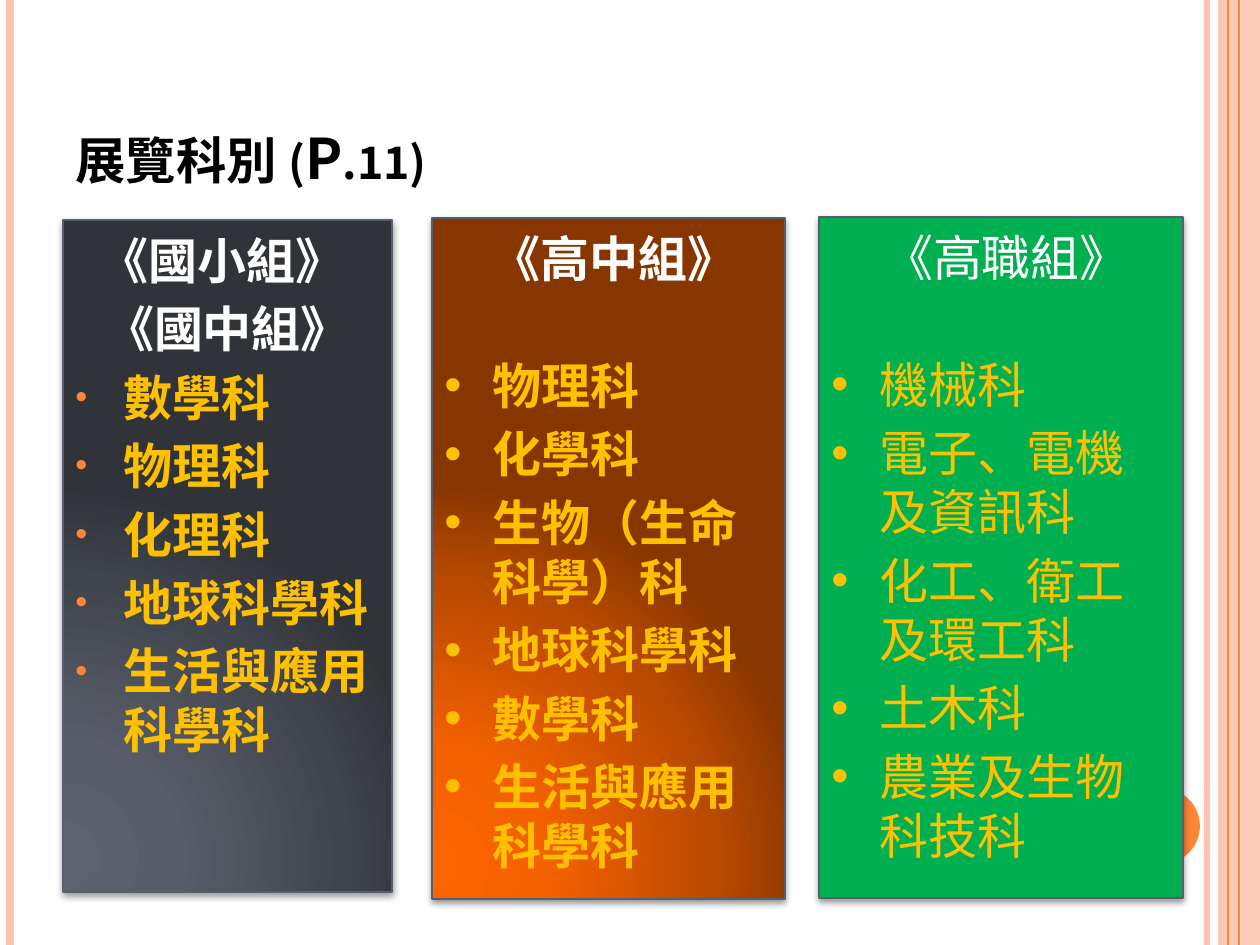
"""Build the slide listing the exhibition subjects of each school group."""
from pptx import Presentation
from pptx.dml.color import RGBColor
from pptx.enum.shapes import MSO_CONNECTOR, MSO_SHAPE
from pptx.enum.text import MSO_ANCHOR, PP_ALIGN
from pptx.oxml import parse_xml
from pptx.oxml.ns import nsdecls, qn
from pptx.util import Pt

STRAIGHT = MSO_CONNECTOR.STRAIGHT
RECTANGLE, OVAL = MSO_SHAPE.RECTANGLE, MSO_SHAPE.OVAL
TOP, BOTTOM = MSO_ANCHOR.TOP, MSO_ANCHOR.BOTTOM
LEFT, CENTER = PP_ALIGN.LEFT, PP_ALIGN.CENTER
WIDTH, HEIGHT = 1260, 945

THEME = {
    "font": "Noto Sans CJK JP",
    "orange": "FE8637", "peach": "FEC3AE", "outline": "575F6D",
    "black": "000000", "white": "FFFFFF", "gold": "FFC000", "green": "00B050",
    "slate": [(0, "5D636E"), (30, "585E69"), (75, "40444C"), (100, "303338")],
    "ember": [(0, "FD6400"), (30, "F46100"), (75, "B74900"), (100, "873600")],
    "title": 36, "page_ref": 32, "body": 28,
    "line_pitch": 33.7, "para_gap": 5.4, "group_gap": 39,
}


def px(value):
    return round(value * 914400 / 126)


def add_xml(parent, xml):
    tag, rest = xml.split(" ", 1) if " " in xml.split(">")[0] else (xml.split("/")[0].split(">")[0], "")
    rest = rest if rest else xml[len(tag):]
    parent.append(parse_xml(f"<a:{tag} {nsdecls('a')} {rest}"))


deck = Presentation()
deck.slide_width, deck.slide_height = px(WIDTH), px(HEIGHT)
page = deck.slides.add_slide(deck.slide_layouts[6])

band = page.shapes.add_shape(RECTANGLE, px(1218), 0, px(42), px(HEIGHT))
disc = page.shapes.add_shape(OVAL, px(1124), px(788), px(76), px(76))
for shape, color in ((band, "peach"), (disc, "orange")):
    shape.shadow.inherit = False
    shape.fill.solid()
    shape.fill.fore_color.rgb = RGBColor.from_string(THEME[color])
    shape.line.fill.background()
add_xml(band.fill._xPr.find(qn("a:solidFill"))[0], 'alpha val="87000"/>')

for x, color, weight in ((1207, "peach", 3), (10, "peach", 4.5),
                         (1239, "orange", 1.5), (1228, "orange", 0.75)):
    stripe = page.shapes.add_connector(STRAIGHT, px(x), 0, px(x), px(HEIGHT))
    stripe.line.color.rgb = RGBColor.from_string(THEME[color])
    stripe.line.width = Pt(weight)
    add_xml(stripe._element.spPr, "effectLst />")

title = page.shapes.add_textbox(px(63), px(38), px(1232), px(157))
title.text_frame.word_wrap = True
title.text_frame.vertical_anchor = BOTTOM
title.text_frame.margin_bottom = px(3)
para = title.text_frame.paragraphs[0]
para.font.bold = True
para.font.color.rgb = RGBColor.from_string(THEME["black"])
for text, size in (("展覽科別 ", "title"), ("(P.11)", "page_ref")):
    span = para.add_run()
    span.text = text
    span.font.size = Pt(THEME[size])
    span.font.bold = True
    span.font.name = THEME["font"]
    span.font.color.rgb = RGBColor.from_string(THEME["black"])
    span.font._element.set("cap", "small")
    add_xml(span.font._element, f'ea typeface="{THEME["font"]}"/>')

COLUMNS = [
    ((63, 220, 329, 672), "slate", True, "para_gap", ("orange", 70),
     ["《國小組》 ", "《國中組》"],
     ["數學科", "物理科", "化理科", "地球科學科", "生活與應用科學科"]),
    ((432, 218, 353, 681), "ember", True, "group_gap", ("gold", 100),
     [" 《高中組》"],
     ["物理科", "化學科", "生物（生命科學）科", "地球科學科", "數學科", "生活與應用科學科"]),
    ((819, 217, 364, 681), "green", False, "group_gap", ("gold", 100),
     [" 《高職組》"],
     ["機械科", "電子、電機及資訊科", "化工、衛工及環工科", "土木科", "農業及生物科技科"]),
]

for place, fill, bold, first_gap, (bullet_color, bullet_size), groups, subjects in COLUMNS:
    box = page.shapes.add_shape(RECTANGLE, *map(px, place))
    properties = box._element.spPr
    if fill == "green":
        box.fill.solid()
        box.fill.fore_color.rgb = RGBColor.from_string(THEME[fill])
    else:
        box.fill.gradient()
        gradient = properties.find(qn("a:gradFill"))
        for child in list(gradient):
            gradient.remove(child)
        stops = "".join(f'<a:gs pos="{stop * 1000}"><a:srgbClr val="{color}"/></a:gs>'
                        for stop, color in THEME[fill])
        add_xml(gradient, f"gsLst >{stops}</a:gsLst>")
        add_xml(gradient, 'path path="circle"><a:fillToRect l="5000" t="100000" '
                          'r="120000" b="10000"/></a:path>')
    box.line.color.rgb = RGBColor.from_string(THEME["outline"])
    box.line.width = Pt(0.75)
    add_xml(properties, 'effectLst ><a:outerShdw blurRad="50800" dist="20320" dir="5400000">'
                        '<a:srgbClr val="000000"><a:alpha val="42000"/></a:srgbClr>'
                        '</a:outerShdw></a:effectLst>')
    frame = box.text_frame
    frame.word_wrap = True
    frame.vertical_anchor = TOP
    frame.margin_top = px(10)
    for index, text in enumerate(groups + subjects):
        para = frame.paragraphs[0] if index == 0 else frame.add_paragraph()
        is_group = index < len(groups)
        gap = first_gap if index == len(groups) else "para_gap"
        para.alignment = CENTER if is_group else LEFT
        para.line_spacing = Pt(THEME["line_pitch"])
        para.space_before = Pt(THEME[gap] if index else 0)
        if not is_group:
            settings = para._p.get_or_add_pPr()
            settings.set("marL", str(px(48)))
            settings.set("indent", str(px(-48)))
            add_xml(settings, f'buClr ><a:srgbClr val="{THEME[bullet_color]}"/></a:buClr>')
            add_xml(settings, f'buSzPct val="{bullet_size * 1000}"/>')
            add_xml(settings, 'buFont typeface="Arial"/>')
            add_xml(settings, 'buChar char="•"/>')
        span = para.add_run()
        span.text = text
        span.font.size = Pt(THEME["body"])
        span.font.bold = bold
        span.font.name = THEME["font"]
        span.font.color.rgb = RGBColor.from_string(THEME["white" if is_group else "gold"])
        add_xml(span.font._element, f'ea typeface="{THEME["font"]}"/>')

deck.save("out.pptx")
